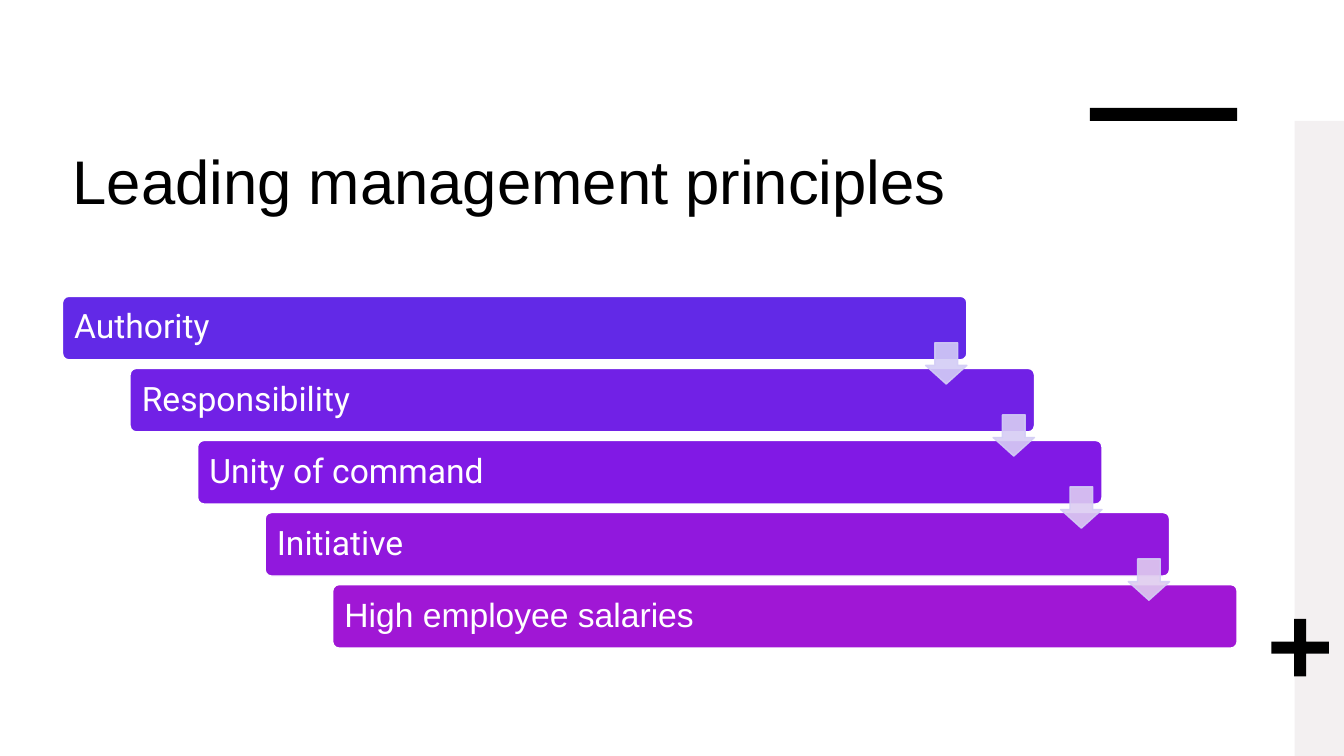
from lxml import etree
from pptx import Presentation
from pptx.dml.color import RGBColor
from pptx.enum.shapes import MSO_SHAPE
from pptx.enum.text import MSO_ANCHOR, MSO_AUTO_SIZE, PP_ALIGN
from pptx.oxml.ns import qn
from pptx.util import Inches, Pt

COLORS = {
    "black": "000000",
    "white": "FFFFFF",
    "panel": "F3F0F1",
    "arrow_line": "D3CDF6",
}

# Text, font, bar fill
PRINCIPLES = [
    ("Authority", "Roboto", "6229E7"),
    ("Responsibility", "Roboto", "7121E6"),
    ("Unity of command", "Roboto", "8119E5"),
    ("Initiative", "Roboto", "9118DD"),
    ("High employee salaries", "Arial", "A017D5"),
]
ARROW_FILLS = ["D3CDF6", "D7CDF4", "DCCCF2", "DFCCEF"]

BAR_LEFT, BAR_TOP, BAR_W, BAR_H = 0.62, 2.94, 8.97, 0.63
STEP_X, STEP_Y = 0.67, 0.715
ARROW_TOP, ARROW_SIZE = 3.4, 0.41


def write_text(tf, text, size=24, font="Arial", color="white", spacing=1.0,
               anchor=MSO_ANCHOR.MIDDLE, margin=0.1):
    tf.word_wrap = True
    tf.auto_size = MSO_AUTO_SIZE.NONE
    tf.vertical_anchor = anchor
    tf.margin_left = tf.margin_right = Inches(margin)
    tf.margin_top = tf.margin_bottom = Inches(margin)
    p = tf.paragraphs[0]
    p.alignment = PP_ALIGN.LEFT
    p.line_spacing = spacing
    r = p.add_run()
    r.text = text
    r.font.size = Pt(size)
    r.font.name = font
    r.font.color.rgb = RGBColor.from_string(COLORS[color])


class SlideBuilder:
    def __init__(self, prs):
        self.s = prs.slides.add_slide(prs.slide_layouts[5])

    def title(self, text, x, y, w, h):
        sp = self.s.shapes.title
        sp.left, sp.top = Inches(x), Inches(y)
        sp.width, sp.height = Inches(w), Inches(h)
        write_text(sp.text_frame, text, size=44, color="black",
                   anchor=MSO_ANCHOR.TOP)

    def shape(self, kind, x, y, w, h, fill, line=None, adjust=()):
        sp = self.s.shapes.add_shape(kind, Inches(x), Inches(y),
                                     Inches(w), Inches(h))
        sp.shadow.inherit = False
        sp.fill.solid()
        sp.fill.fore_color.rgb = RGBColor.from_string(fill)
        if line:
            sp.line.color.rgb = RGBColor.from_string(line)
            sp.line.width = Pt(1)
        else:
            sp.line.fill.background()
        for i, value in enumerate(adjust):
            sp.adjustments[i] = value
        return sp

    def bar(self, x, y, text, font, fill):
        sp = self.shape(MSO_SHAPE.ROUNDED_RECTANGLE, x, y, BAR_W, BAR_H,
                        fill, COLORS["white"], [0.1])
        write_text(sp.text_frame, text, font=font, spacing=0.9)

    def arrow(self, x, y, fill):
        sp = self.shape(MSO_SHAPE.DOWN_ARROW, x, y, ARROW_SIZE, ARROW_SIZE,
                        fill, COLORS["arrow_line"], [0.55, 0.45])
        # 90% opacity on both fill and outline
        for clr in sp._element.spPr.iter(qn("a:srgbClr")):
            etree.SubElement(clr, qn("a:alpha")).set("val", "90000")


def main():
    prs = Presentation()
    prs.slide_width, prs.slide_height = Inches(13.33), Inches(7.5)
    slide = SlideBuilder(prs)

    # Title and decoration
    slide.title("Leading management principles", 0.62, 1.32, 9.04, 1.58)
    slide.shape(MSO_SHAPE.RECTANGLE, 12.84, 1.2, 0.49, 6.3, COLORS["panel"])
    slide.shape(MSO_SHAPE.RECTANGLE, 10.81, 1.07, 1.46, 0.13, COLORS["black"])
    slide.shape(MSO_SHAPE.CROSS, 12.61, 6.14, 0.57, 0.57, COLORS["black"],
                adjust=[0.395])

    # Staircase of principles
    for i, (text, font, fill) in enumerate(PRINCIPLES):
        slide.bar(BAR_LEFT + i * STEP_X, BAR_TOP + i * STEP_Y,
                  text, font, fill)

    # Arrows, flush with the right end of each bar
    arrow_left = BAR_LEFT + BAR_W - ARROW_SIZE
    for i, fill in enumerate(ARROW_FILLS):
        slide.arrow(arrow_left + i * STEP_X, ARROW_TOP + i * STEP_Y, fill)

    prs.save("out.pptx")


if __name__ == "__main__":
    main()
